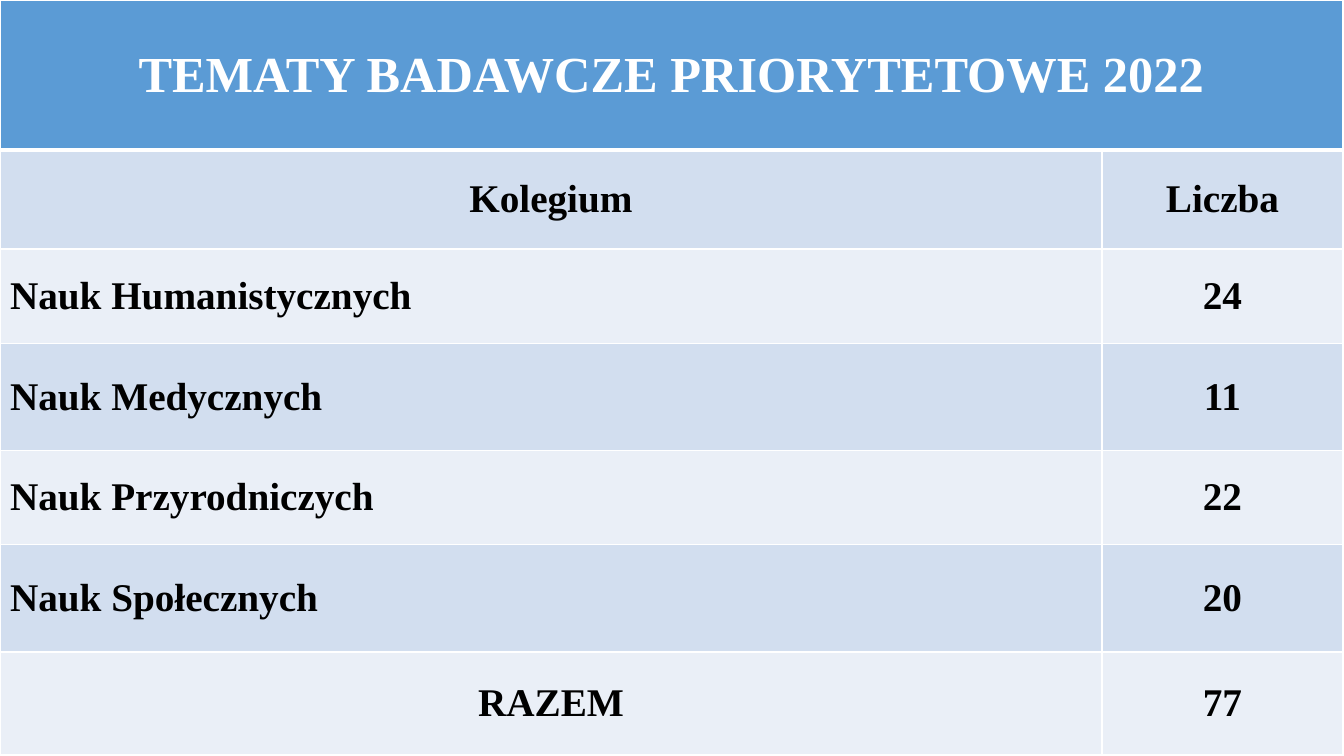
from lxml import etree
from pptx import Presentation
from pptx.dml.color import RGBColor
from pptx.enum.text import MSO_ANCHOR, PP_ALIGN
from pptx.oxml.ns import qn
from pptx.util import Pt

CENTER, LEFT = PP_ALIGN.CENTER, PP_ALIGN.LEFT
MIDDLE = MSO_ANCHOR.MIDDLE

WHITE = RGBColor(0xFF, 0xFF, 0xFF)
BLACK = RGBColor(0x00, 0x00, 0x00)
BLUE = RGBColor(0x5B, 0x9B, 0xD5)
BANDS = [RGBColor(0xD2, 0xDE, 0xEF), RGBColor(0xEA, 0xEF, 0xF7)]

EMU_PER_PX = 9144  # 100 px to the inch
SLIDE_WIDTH, SLIDE_HEIGHT = 1333, 750
COLUMN_WIDTHS = [1093, 239]
ROW_HEIGHTS = [149, 98, 94, 106, 93, 107, 102]

TITLE = "TEMATY BADAWCZE PRIORYTETOWE 2022"
ROWS = [
    ("Kolegium", "Liczba", CENTER),
    ("Nauk Humanistycznych", "24", LEFT),
    ("Nauk Medycznych", "11", LEFT),
    ("Nauk Przyrodniczych", "22", LEFT),
    ("Nauk Społecznych", "20", LEFT),
    ("RAZEM", "77", CENTER),
]


def px(length):
    """Turn px into EMU."""
    return length * EMU_PER_PX


class SlideBuilder:
    """Holds the slide and its table style."""

    font_name = "Times New Roman"
    title_size, body_size = 36, 28
    border_width, header_border_width = 1, 3

    def __init__(self, slide):
        self.slide = slide

    def table(self, left, top, column_widths, row_heights):
        frame = self.slide.shapes.add_table(
            len(row_heights), len(column_widths), px(left), px(top),
            px(sum(column_widths)), px(sum(row_heights)))
        table = frame.table
        for column, width in zip(table.columns, column_widths):
            column.width = px(width)
        for row, height in zip(table.rows, row_heights):
            row.height = px(height)
        return table

    def cell(self, cell, text, fill, color=BLACK, size=body_size, align=CENTER):
        cell.text = text
        cell.vertical_anchor = MIDDLE
        cell.fill.solid()
        cell.fill.fore_color.rgb = fill
        paragraph = cell.text_frame.paragraphs[0]
        paragraph.alignment = align
        font = paragraph.font
        font.name, font.size, font.bold = self.font_name, Pt(size), True
        font.color.rgb = color

    def borders(self, cell, top=border_width, bottom=border_width):
        """Draw white lines on all four sides, with widths in points."""
        widths = {"lnL": self.border_width, "lnR": self.border_width,
                  "lnT": top, "lnB": bottom}
        properties = cell._tc.get_or_add_tcPr()
        for index, (side, width) in enumerate(widths.items()):
            line = etree.Element(qn(f"a:{side}"), w=str(Pt(width)))
            fill = etree.SubElement(line, qn("a:solidFill"))
            etree.SubElement(fill, qn("a:srgbClr"), val=str(WHITE))
            properties.insert(index, line)


def main():
    deck = Presentation()
    deck.slide_width, deck.slide_height = px(SLIDE_WIDTH), px(SLIDE_HEIGHT)
    blank_layout = deck.slide_layouts[6]
    builder = SlideBuilder(deck.slides.add_slide(blank_layout))

    table = builder.table(0, 0, COLUMN_WIDTHS, ROW_HEIGHTS)
    header, header_end = table.cell(0, 0), table.cell(0, 1)
    header.merge(header_end)
    builder.cell(header, TITLE, BLUE, WHITE, builder.title_size)
    for cell in (header, header_end):
        builder.borders(cell, bottom=builder.header_border_width)

    for row, (college, count, align) in enumerate(ROWS, start=1):
        band = BANDS[(row - 1) % 2]
        top = builder.header_border_width if row == 1 else builder.border_width
        builder.cell(table.cell(row, 0), college, band, align=align)
        builder.cell(table.cell(row, 1), count, band)
        for column in range(len(COLUMN_WIDTHS)):
            builder.borders(table.cell(row, column), top=top)

    deck.save("out.pptx")


if __name__ == "__main__":
    main()
